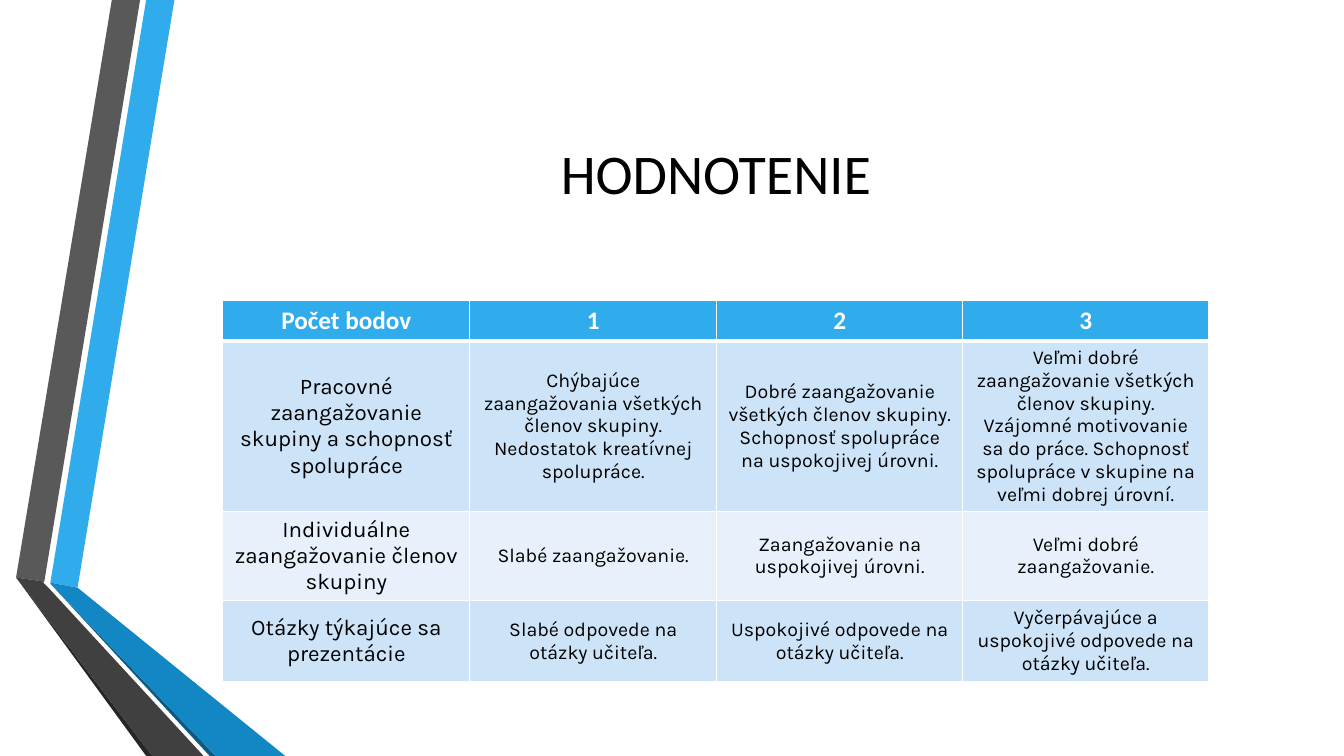
import pptx
import pptx.util
import pptx.dml.color
import pptx.enum.text
import pptx.oxml.ns
import lxml.etree

RGB = pptx.dml.color.RGBColor
WHITE = RGB(0xFF, 0xFF, 0xFF)
BLACK = RGB(0x00, 0x00, 0x00)
BLUE = RGB(0x30, 0xAC, 0xEC)
BLUE_MID = RGB(0x12, 0x87, 0xC3)
BLUE_DARK = RGB(0x0C, 0x5A, 0x82)
GRAY = RGB(0x59, 0x59, 0x59)
GRAY_MID = RGB(0x40, 0x40, 0x40)
GRAY_DARK = RGB(0x26, 0x26, 0x26)
BAND_ODD = RGB(0xCD, 0xE3, 0xF8)
BAND_EVEN = RGB(0xE8, 0xF1, 0xFB)

HEADING_FONT = "Calibri"
BODY_FONT = "Karla"
MIDDLE = pptx.enum.text.MSO_ANCHOR.MIDDLE
TOP = pptx.enum.text.MSO_ANCHOR.TOP
EMU_PER_PX = 9144

RIBBONS = [
    (BLUE, [(50, 578), (77, 583), (173, 0), (145, 0)]),
    (GRAY, [(139, 0), (111, 0), (16, 573), (44, 577)]),
    (GRAY_DARK, [(16, 573), (145, 750), (151, 750)]),
    (BLUE_DARK, [(50, 579), (208, 750), (214, 750)]),
    (BLUE_MID, [(50, 579), (214, 750), (283, 750), (77, 583), (50, 578)]),
    (GRAY_MID, [(202, 750), (48, 583), (43, 578), (44, 577), (16, 573), (151, 750)]),
]

COLUMN_WIDTHS = [245, 245, 244, 244]
ROW_HEIGHTS = [40, 169, 88, 81]
RUBRIC = [
    ["Počet bodov", "1", "2", "3"],
    [
        "Pracovné zaangažovanie skupiny a schopnosť spolupráce",
        "Chýbajúce zaangažovania všetkých členov skupiny. Nedostatok kreatívnej spolupráce.",
        "Dobré zaangažovanie všetkých členov skupiny. Schopnosť spolupráce na uspokojivej úrovni.",
        "Veľmi dobré zaangažovanie všetkých členov skupiny. Vzájomné motivovanie sa do práce. "
        "Schopnosť spolupráce v skupine na veľmi dobrej úrovní.",
    ],
    [
        "Individuálne zaangažovanie členov skupiny",
        "Slabé zaangažovanie.",
        "Zaangažovanie na uspokojivej úrovni.",
        "Veľmi dobré zaangažovanie.",
    ],
    [
        "Otázky týkajúce sa prezentácie",
        "Slabé odpovede na otázky učiteľa.",
        "Uspokojivé odpovede na otázky učiteľa.",
        "Vyčerpávajúce a uspokojivé odpovede na otázky učiteľa.",
    ],
]


def px(n):
    return pptx.util.Emu(n * EMU_PER_PX)


def write(tf, text, font=BODY_FONT, size=14, color=BLACK, bold=False):
    p = tf.paragraphs[0]
    p.alignment = pptx.enum.text.PP_ALIGN.CENTER
    r = p.add_run()
    r.text = text
    r.font.name = font
    r.font.size = pptx.util.Pt(size)
    r.font.color.rgb = color
    r.font.bold = bold


def set_borders(cell, color, widths):
    tc_pr = cell._tc.get_or_add_tcPr()
    qn = pptx.oxml.ns.qn
    for side, width in widths.items():
        ln = lxml.etree.SubElement(tc_pr, qn("a:ln" + side), w=str(pptx.util.Pt(width)))
        fill = lxml.etree.SubElement(ln, qn("a:solidFill"))
        lxml.etree.SubElement(fill, qn("a:srgbClr"), val=str(color))


class Deck:
    def __init__(self, width, height):
        self.prs = pptx.Presentation()
        self.prs.slide_width = px(width)
        self.prs.slide_height = px(height)
        self.s = self.prs.slides.add_slide(self.prs.slide_layouts[5])
        self.s.background.fill.solid()
        self.s.background.fill.fore_color.rgb = WHITE

    def title(self, text, x, y, w, h):
        sp = self.s.shapes.title
        sp.left, sp.top, sp.width, sp.height = px(x), px(y), px(w), px(h)
        sp.text_frame.vertical_anchor = MIDDLE
        write(sp.text_frame, text, font=HEADING_FONT, size=40)

    def ribbon(self, color, points):
        builder = self.s.shapes.build_freeform(*points[0], scale=EMU_PER_PX)
        builder.add_line_segments(points[1:], close=True)
        sp = builder.convert_to_shape()
        sp.shadow.inherit = False
        sp.fill.solid()
        sp.fill.fore_color.rgb = color
        sp.line.fill.background()

    def table(self, rows, x, y, widths, heights):
        frame = self.s.shapes.add_table(
            len(rows), len(widths), px(x), px(y), px(sum(widths)), px(sum(heights)))
        table = frame.table
        for column, width in zip(table.columns, widths):
            column.width = px(width)
        for i, texts in enumerate(rows):
            table.rows[i].height = px(heights[i])
            for j, text in enumerate(texts):
                self.cell(table.cell(i, j), text, i, j)

    def cell(self, cell, text, row, column):
        header = row == 0
        set_borders(cell, WHITE, {"L": 1, "R": 1, "T": 1, "B": 3 if header else 1})
        cell.fill.solid()
        cell.vertical_anchor = TOP if header else MIDDLE
        if header:
            cell.fill.fore_color.rgb = BLUE
            write(cell.text_frame, text, font=HEADING_FONT, size=18, color=WHITE, bold=True)
        else:
            cell.fill.fore_color.rgb = BAND_ODD if row % 2 else BAND_EVEN
            write(cell.text_frame, text, size=14 if column else 16)


def main():
    deck = Deck(1333, 750)
    for color, points in RIBBONS:
        deck.ribbon(color, points)
    deck.table(RUBRIC, 221, 298, COLUMN_WIDTHS, ROW_HEIGHTS)
    deck.title("HODNOTENIE", 162, 75, 1096, 192)
    deck.prs.save("out.pptx")


if __name__ == "__main__":
    main()
